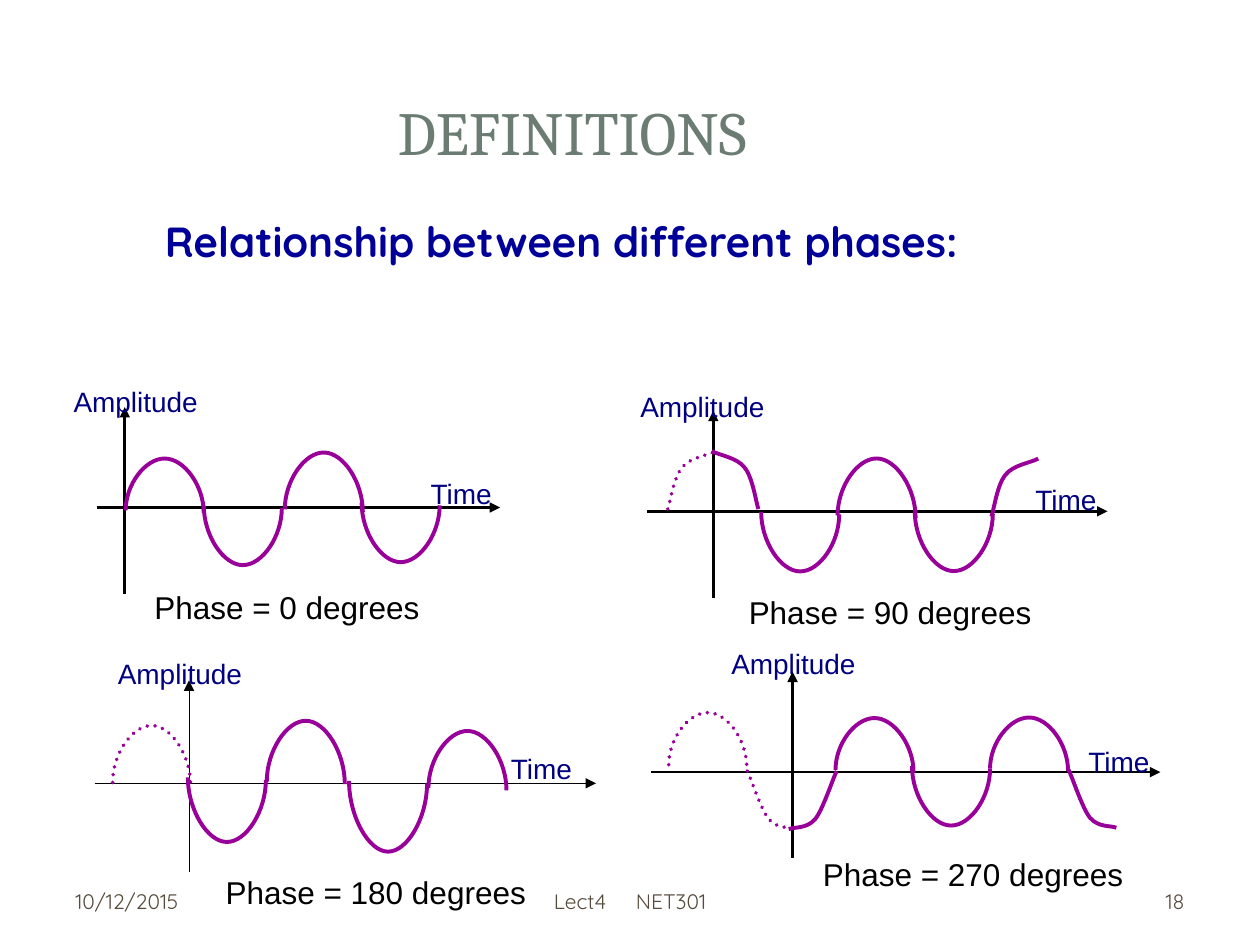
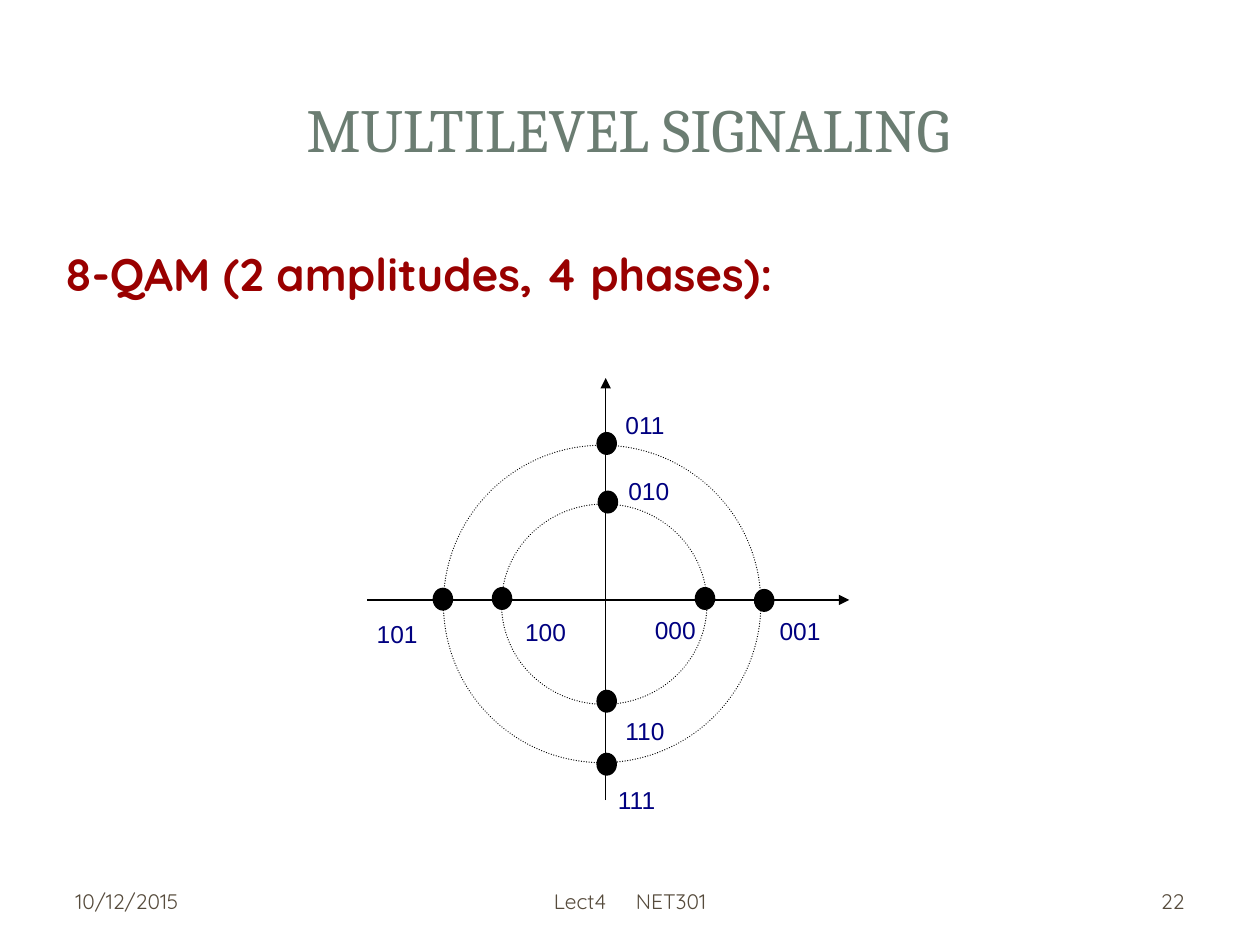
import pptx
import pptx.util
import pptx.dml.color
import pptx.enum.dml
import pptx.enum.shapes
import pptx.enum.text
import pptx.oxml.ns
import lxml.etree

Pt = pptx.util.Pt
qn = pptx.oxml.ns.qn
ALIGN = pptx.enum.text.PP_ALIGN
ANCHOR = pptx.enum.text.MSO_ANCHOR
CONNECTOR = pptx.enum.shapes.MSO_CONNECTOR
SHAPE = pptx.enum.shapes.MSO_SHAPE

BLACK, WHITE, NAVY, PURPLE = "000000", "FFFFFF", "000080", "990099"
TITLE_GREEN, FOOTER_BROWN = "6B7D72", "564B3C"


def paint(fill, colour):
    fill.solid()
    fill.fore_color.rgb = pptx.dml.color.RGBColor.from_string(colour)


def write(box, text, size=12, font="Arial", colour=BLACK, bold=False,
          align=ALIGN.CENTER, anchor=ANCHOR.TOP, wrap=True, gap=0):
    frame = box.text_frame
    frame.word_wrap = wrap
    frame.auto_size = pptx.enum.text.MSO_AUTO_SIZE.NONE
    frame.vertical_anchor = anchor
    para = frame.paragraphs[0]
    para.alignment = align
    span = para.add_run()
    span.text = text
    span.font.size = Pt(size)
    span.font.name = font
    span.font.bold = bold
    paint(span.font.fill, colour)
    if gap:
        span.font._element.set("spc", str(round(gap * 100)))
    return para


deck = pptx.Presentation()
deck.slide_width, deck.slide_height = Pt(720), Pt(540)

slides = [
    ("DEFINITIONS", (42, 30, 570, 90), "Relationship between different phases:",
     (78, 119.5, 564, 366), 24, "000099", (27, -18), "18"),
    ("MULTILEVEL SIGNALING", (34, 32, 650, 82), "8-QAM (2 amplitudes, 4 phases):",
     (30, 137, 630, 367), 26, "990000", (31, -31), "22"),
]
pages = []
for title, title_place, heading, body_place, size, colour, indents, number in slides:
    page = deck.slides.add_slide(deck.slide_layouts[1])
    pages.append(page)
    title_box, body_box = page.placeholders
    for box, place in ((title_box, title_place), (body_box, body_place)):
        box.left, box.top, box.width, box.height = map(Pt, place)
    write(title_box, title, size=35, font="Cambria", colour=TITLE_GREEN, anchor=ANCHOR.MIDDLE)
    para = write(body_box, heading, size=size, font="Quicksand", colour=colour,
                 bold=True, align=ALIGN.LEFT)
    properties = para._p.get_or_add_pPr()
    properties.set("marL", str(Pt(indents[0])))
    properties.set("indent", str(Pt(indents[1])))
    lxml.etree.SubElement(properties, qn("a:buNone"))

    footers = [
        (36, 168, ALIGN.LEFT, [("10/12/2015", 0)]),
        (246, 228, ALIGN.CENTER, [("Lect4", 0), (" ", 13.6), ("NET301", 0)]),
        (516, 168, ALIGN.RIGHT, [(number, 0)]),
    ]
    for left, width, align, spans in footers:
        box = page.shapes.add_textbox(Pt(left), Pt(500.5), Pt(width), Pt(29))
        for text, gap in spans:
            write(box, text, font="Quicksand", colour=FOOTER_BROWN, align=align,
                  anchor=ANCHOR.MIDDLE, gap=gap)

phase_page, qam_page = pages
panels = [
    (SHAPE.ROUNDED_RECTANGLE, (7.2, 7.9, 705.6, 524.9), 100),
    (SHAPE.RECTANGLE, (21.6, 21.6, 676.8, 104.4), 83),
    (SHAPE.RECTANGLE, (29.5, 29.5, 660.2, 87.8), 100),
]
for order, (kind, place, opacity) in enumerate(panels):
    panel = phase_page.shapes.add_shape(kind, *map(Pt, place))
    panel.shadow.inherit = False
    panel.line.fill.background()
    paint(panel.fill, WHITE)
    if kind == SHAPE.ROUNDED_RECTANGLE:
        panel.adjustments[0] = 0.017
    if opacity < 100:
        tint = panel._element.xpath("./p:spPr/a:solidFill/a:srgbClr")[0]
        lxml.etree.SubElement(tint, qn("a:alpha")).set("val", str(opacity * 1000))
    panel._element.nvSpPr.cNvPr.set("id", str(100 + order))
    deck.slide_master.shapes._spTree.insert(2 + order, panel._element)

phase_groups = [phase_page.shapes.add_group_shape().shapes for _ in range(4)]
qam_group = qam_page.shapes.add_group_shape().shapes
groups = phase_groups + [qam_group]
strokes = []

axes = [
    (71.3, 232.6, 339.3, 290, 55.4, 285.8, 1.5),
    (407.6, 234.7, 341.5, 292.2, 370, 632.9, 1.5),
    (108, 388.8, 498.2, 447.6, 54, 340.6, 0.5),
    (452.9, 383.8, 490.3, 441.2, 372.2, 663.1, 1.5),
    (346.1, 216, 457.2, 342.8, 210, 485.3, 0.75),
]
for group, (x, top, bottom, y, left, right, weight) in zip(groups, axes):
    for ends in ((x, bottom, x, top), (left, y, right, y)):
        axis = group.add_connector(CONNECTOR.STRAIGHT, *map(Pt, ends))
        strokes.append((axis, BLACK, weight, False, True))

SPAN, RISE = 44.6, 1.44
waves = [
    [(71.8, 291.6, 262.1, False), (116.4, 288.9, 322.8, False),
     (162.7, 291.1, 258.7, False), (206.6, 287.3, 321.1, False)],
    [(434.9, 292.5, 326.4, False), (478.6, 294.5, 262.1, False),
     (522.7, 292.3, 326.2, False)],
    [(107.3, 444.2, 481, False), (152.4, 446.6, 412, False),
     (199.4, 446.2, 486.5, False), (244.8, 450.2, 417.8, False),
     (64.3, 447.1, 414.7, True)],
    [(477.4, 439.9, 410.4, False), (521.1, 437.8, 471.6, False),
     (565.7, 439.2, 410.1, False), (382.1, 437, 407.3, True)],
]
for group, arcs in zip(phase_groups, waves):
    for left, start, apex, dotted in arcs:
        x, y = left + SPAN / 2, start + RISE / 2
        arc = group.add_connector(CONNECTOR.CURVE, Pt(x + RISE / 2), Pt(y - SPAN / 2),
                                  Pt(x - RISE / 2), Pt(y + SPAN / 2))
        arc._element.spPr.find(qn("a:xfrm")).set("rot", str(270 * 60000))
        bend = lxml.etree.SubElement(arc._element.xpath(".//a:avLst")[0], qn("a:gd"))
        bend.set("name", "adj1")
        bend.set("fmla", f"val {round((apex - start) / RISE * 100000)}")
        strokes.append((arc, PURPLE, 2.25, dotted, False))

rising = [(0.05, 0.11), (0.12, 0.55), (0.3, 0.72), (0.46, 0.89), (0.85, 0.93), (1, 1)]
falling = [(0.08, 0.13), (0.29, 0.67), (0.45, 0.83), (0.63, 1), (0.89, 0.96), (1, 1)]
quarter_waves = [
    (phase_groups[1], rising, [(433.4, 290.9, 406.8, 257.8, False),
                               (566.6, 295.2, 593.3, 262.1, False),
                               (381.6, 290.9, 409, 257.8, True)]),
    (phase_groups[3], falling, [(478.1, 440.6, 450.7, 473.8, False),
                                (610.6, 439.9, 637.9, 473, False),
                                (427, 440.6, 454.3, 473.8, True)]),
]
for group, profile, quarters in quarter_waves:
    for x0, y0, x1, y1, dotted in quarters:
        builder = group.build_freeform(Pt(x0), Pt(y0))
        builder.add_line_segments([(Pt(x0 + across * (x1 - x0)), Pt(y0 + along * (y1 - y0)))
                                   for across, along in profile], close=False)
        quarter = builder.convert_to_shape()
        quarter.fill.background()
        segments = quarter._element.xpath(".//a:lnTo")
        for first in range(0, len(segments), 3):
            curve = lxml.etree.SubElement(segments[first].getparent(), qn("a:cubicBezTo"))
            for segment in segments[first:first + 3]:
                curve.append(segment[0])
                segment.getparent().remove(segment)
        strokes.append((quarter, PURPLE, 2.25, dotted, False))

rings = [
    ((286.6, 288, 117.4, 114.5),
     [(286.9, 342), (402.9, 342), (347.4, 286.9), (346.7, 400.7)]),
    ((253.4, 254.4, 181.4, 181.4),
     [(253.1, 342.4), (436.7, 343.1), (346.7, 253.4), (346.7, 436.7)]),
]
DOT_WIDTH, DOT_HEIGHT = 11, 12.4
for place, dots in rings:
    circle = qam_group.add_shape(SHAPE.OVAL, *map(Pt, place))
    circle.fill.background()
    strokes.append((circle, BLACK, 0.75, True, False))
    for x, y in dots:
        dot = qam_group.add_shape(SHAPE.OVAL, Pt(x - DOT_WIDTH / 2), Pt(y - DOT_HEIGHT / 2),
                                  Pt(DOT_WIDTH), Pt(DOT_HEIGHT))
        paint(dot.fill, BLACK)
        strokes.append((dot, BLACK, 0.75, False, False))

for shape, colour, weight, dotted, arrow in strokes:
    paint(shape.line.fill, colour)
    shape.line.width = Pt(weight)
    outline = shape._element.spPr
    stroke = outline.find(qn("a:ln"))
    if dotted:
        shape.line.dash_style = pptx.enum.dml.MSO_LINE.ROUND_DOT
        stroke.set("cap", "rnd")
    if arrow:
        lxml.etree.SubElement(stroke, qn("a:tailEnd")).set("type", "triangle")
    lxml.etree.SubElement(outline, qn("a:effectLst"))

phase_labels = [
    ((77.6, 216), (263.5, 269), (164, 332.6)),
    ((401.4, 218.9), (609.1, 272.4), (508.7, 335.5)),
    ((102.9, 371.5), (309.4, 426), (214.7, 495.6)),
    ((453.4, 365.8), (639.4, 421.9), (556, 485.3)),
]
codes = [
    ("000", 385.9, 347.8), ("001", 457.2, 348.5), ("010", 370.8, 268.6),
    ("011", 368.6, 230.6), ("100", 311.8, 349.2), ("101", 227, 350.1),
    ("110", 368.6, 405.9), ("111", 363.8, 445),
]
labels = [(qam_group, code, x, y, 24.5, 16.5, 14, NAVY) for code, x, y in codes]
for index, (amplitude, time, phase) in enumerate(phase_labels):
    group = phase_groups[index]
    labels += [
        (group, "Amplitude", *amplitude, 58, 15, 16, NAVY),
        (group, "Time", *time, 29, 15, 16, NAVY),
        (group, f"Phase = {90 * index} degrees", *phase, 162, 20, 18, BLACK),
    ]
for group, text, x, top, width, height, size, colour in labels:
    box = group.add_textbox(Pt(x - width / 2), Pt(top), Pt(width), Pt(height))
    write(box, text, size=size, colour=colour, wrap=False)

deck.save("out.pptx")
